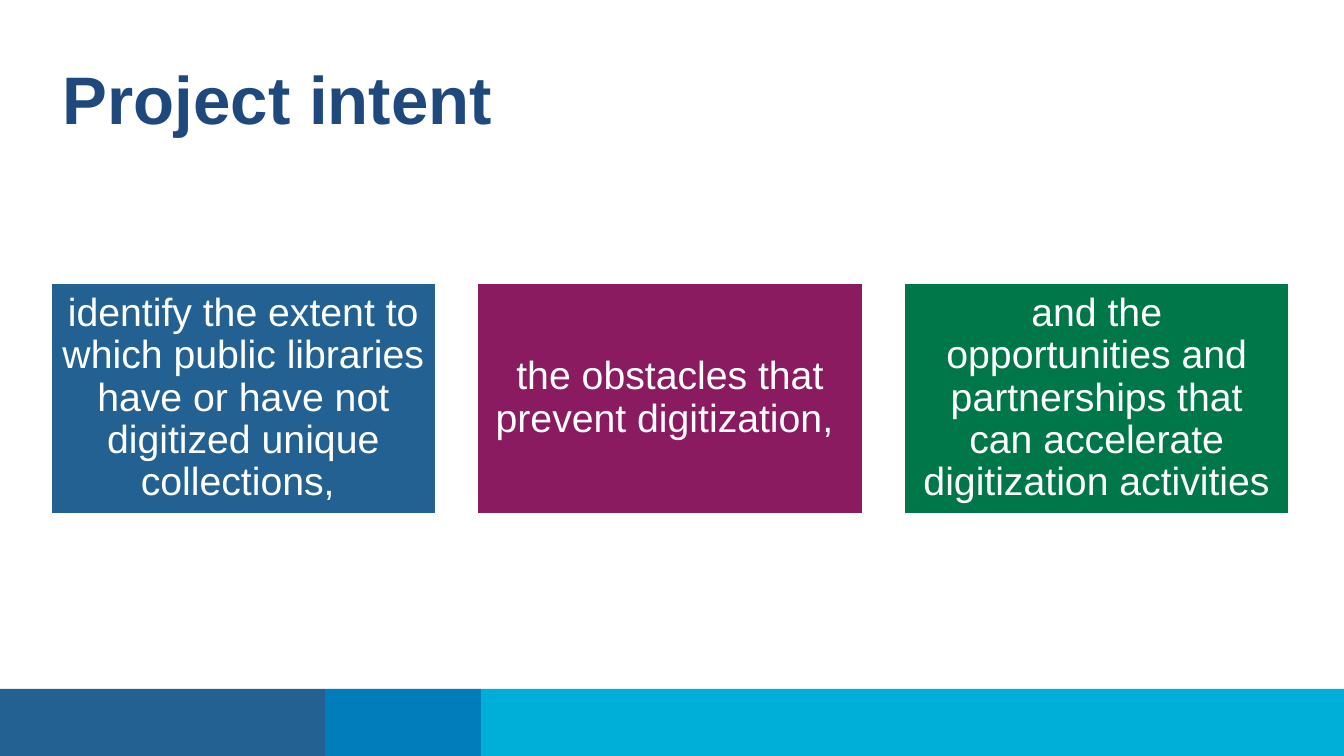
from pptx import Presentation
from pptx.dml.color import RGBColor
from pptx.enum.shapes import MSO_SHAPE
from pptx.enum.text import MSO_ANCHOR, PP_ALIGN
from pptx.util import Inches, Pt

RECTANGLE = MSO_SHAPE.RECTANGLE
TOP, MIDDLE = MSO_ANCHOR.TOP, MSO_ANCHOR.MIDDLE
LEFT, CENTER = PP_ALIGN.LEFT, PP_ALIGN.CENTER

WHITE = RGBColor(0xFF, 0xFF, 0xFF)
NAVY = RGBColor(0x1F, 0x49, 0x7D)
STEEL = RGBColor(0x23, 0x61, 0x92)
BLUE = RGBColor(0x00, 0x7D, 0xBA)
CYAN = RGBColor(0x00, 0xAF, 0xD7)
PLUM = RGBColor(0x8A, 0x1B, 0x61)
GREEN = RGBColor(0x00, 0x77, 0x49)

# Widescreen, 16:9
SLIDE_WIDTH = 10
SLIDE_HEIGHT = SLIDE_WIDTH * 9 / 16
MARGIN, CONTENT_WIDTH = 0.37, 9.23
BAND_HEIGHT = 0.5

TITLE_FONT = {"name": "Arial", "size": Pt(36), "bold": True}
TITLE_FRAME = {"word_wrap": True, "vertical_anchor": TOP}
TITLE_PARAGRAPH = {"alignment": LEFT}
INTENT_FONT = {"name": "Arial", "size": Pt(21)}
INTENT_FRAME = {"word_wrap": True, "vertical_anchor": MIDDLE}
INTENT_FRAME.update({f"margin_{side}": Inches(0.09)
                     for side in ("left", "top", "right", "bottom")})
INTENT_PARAGRAPH = {"alignment": CENTER, "line_spacing": 0.9}

INTENTS = [
    ("identify the extent to which public libraries have or have not "
     "digitized unique collections, ", STEEL),
    ("the obstacles that prevent digitization, ", PLUM),
    ("and the opportunities and partnerships that can accelerate "
     "digitization activities", GREEN),
]
BAND_PARTS = [(2.42, STEEL), (1.16, BLUE), (6.42, CYAN)]


def apply_format(target, values):
    for attribute, value in values.items():
        setattr(target, attribute, value)


def add_block(slide, box, color):
    block = slide.shapes.add_shape(RECTANGLE, *map(Inches, box))
    block.shadow.inherit = False
    block.fill.solid()
    block.fill.fore_color.rgb = color
    block.line.fill.background()
    return block


def write_text(frame, text, color, frame_format, paragraph_format, font):
    apply_format(frame, frame_format)
    paragraph = frame.paragraphs[0]
    apply_format(paragraph, paragraph_format)
    run = paragraph.add_run()
    run.text = text
    apply_format(run.font, font)
    run.font.color.rgb = color


def add_title(slide, box):
    title = slide.shapes.add_textbox(*map(Inches, box))
    write_text(title.text_frame, "Project intent", NAVY,
               TITLE_FRAME, TITLE_PARAGRAPH, TITLE_FONT)


def add_intents(slide, box, block_width=2.88):
    """Spread the intent blocks evenly across the box."""
    left, top, width, height = box
    step = (width - block_width) / (len(INTENTS) - 1)
    for index, (text, color) in enumerate(INTENTS):
        block = add_block(
            slide, (left + index * step, top, block_width, height), color)
        block.line.color.rgb = WHITE
        block.line.width = Pt(2)
        write_text(block.text_frame, text, WHITE,
                   INTENT_FRAME, INTENT_PARAGRAPH, INTENT_FONT)


def add_footer_band(slide, box):
    """Lay the coloured parts side by side from the left of the box."""
    left, top, _, height = box
    for width, color in BAND_PARTS:
        add_block(slide, (left, top, width, height), color)
        left += width


def main():
    presentation = Presentation()
    presentation.slide_width = Inches(SLIDE_WIDTH)
    presentation.slide_height = Inches(SLIDE_HEIGHT)
    slide = presentation.slides.add_slide(presentation.slide_layouts[6])

    # Footer band, intent blocks, title
    add_footer_band(
        slide, (0, SLIDE_HEIGHT - BAND_HEIGHT, SLIDE_WIDTH, BAND_HEIGHT))
    add_intents(slide, (MARGIN, 2.1, CONTENT_WIDTH, 1.73))
    add_title(slide, (MARGIN, 0.38, CONTENT_WIDTH, 0.75))

    presentation.save("out.pptx")


if __name__ == "__main__":
    main()
